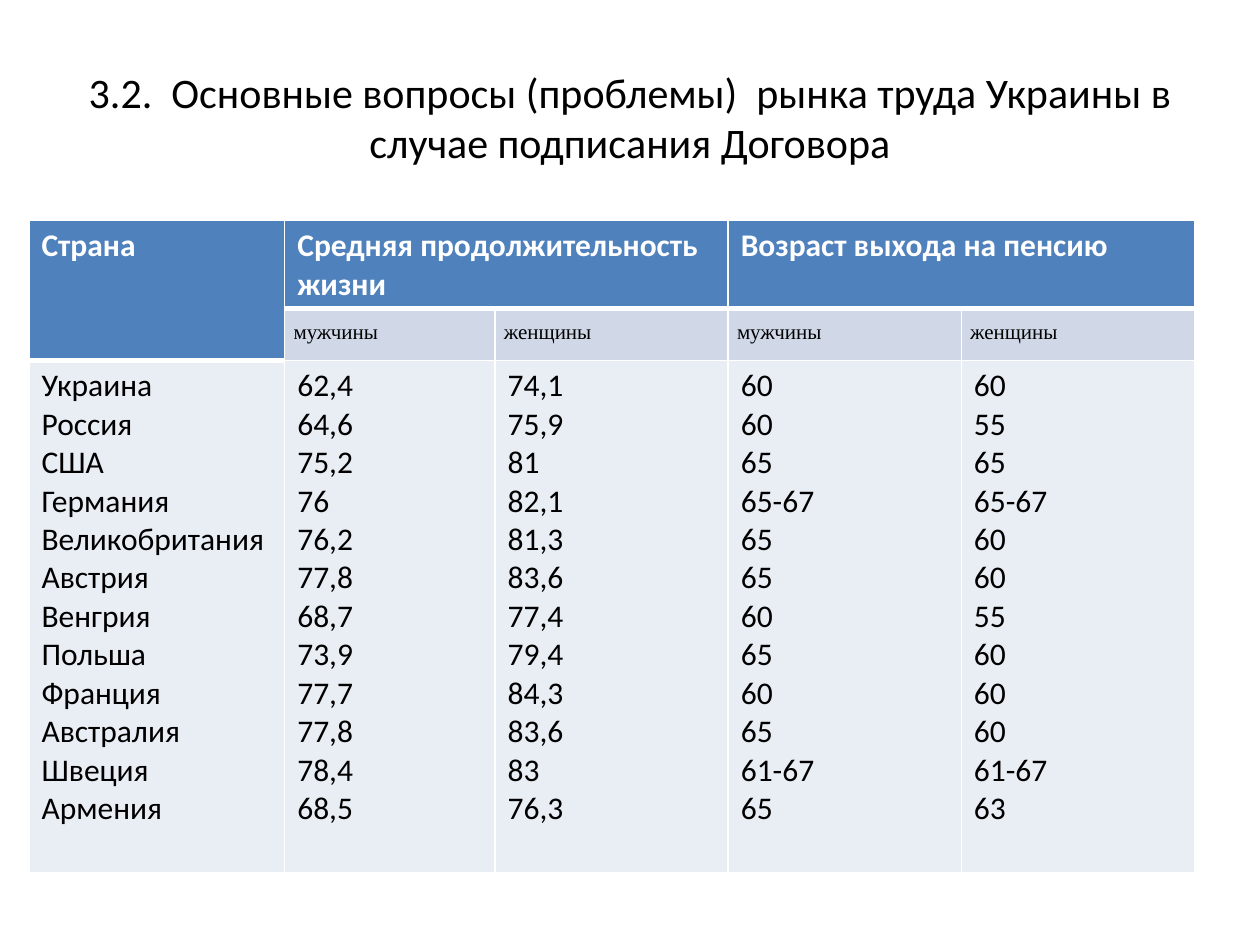
import pptx
import pptx.dml.color
import pptx.enum.text
import pptx.oxml.ns
import pptx.util
from lxml import etree
from pptx.util import Inches

COLORS = {
    "text": "000000",
    "white": "FFFFFF",
    "header": "4F81BD",
    "subheader": "D0D8E8",
    "body": "E9EDF4",
}
TITLE = "3.2.  Основные вопросы (проблемы)  рынка труда Украины в случае подписания Договора"
HEADERS = {0: "Страна", 1: "Средняя продолжительность жизни", 3: "Возраст выхода на пенсию"}
SUBHEADERS = ["", "мужчины", "женщины", "мужчины", "женщины"]
COUNTRIES = [
    ("Украина", "62,4", "74,1", "60", "60"),
    ("Россия", "64,6", "75,9", "60", "55"),
    ("США", "75,2", "81", "65", "65"),
    ("Германия", "76", "82,1", "65-67", "65-67"),
    ("Великобритания", "76,2", "81,3", "65", "60"),
    ("Австрия", "77,8", "83,6", "65", "60"),
    ("Венгрия", "68,7", "77,4", "60", "55"),
    ("Польша", "73,9", "79,4", "65", "60"),
    ("Франция", "77,7", "84,3", "60", "60"),
    ("Австралия", "77,8", "83,6", "65", "60"),
    ("Швеция", "78,4", "83", "61-67", "61-67"),
    ("Армения", "68,5", "76,3", "65", "63"),
]
COLUMN_WIDTHS = [2.03, 1.67, 1.85, 1.85, 1.85]
ROW_HEIGHTS = [0.7, 0.41, 4.07]


def rgb(name):
    return pptx.dml.color.RGBColor.from_string(COLORS[name])


def format_text(text_frame, size, color="text", font="Calibri", bold=False):
    for paragraph in text_frame.paragraphs:
        for run in paragraph.runs:
            run.font.size = pptx.util.Pt(size)
            run.font.name = font
            run.font.bold = bold
            run.font.color.rgb = rgb(color)


def set_borders(cell, bottom=1):
    """Draw white cell borders; widths are in points."""
    properties = cell._tc.get_or_add_tcPr()
    qn = pptx.oxml.ns.qn
    sides = [("a:lnL", 1), ("a:lnR", 1), ("a:lnT", 1), ("a:lnB", bottom)]
    for index, (tag, width) in enumerate(sides):
        line = etree.Element(qn(tag), w=str(pptx.util.Pt(width)))
        fill = etree.SubElement(line, qn("a:solidFill"))
        etree.SubElement(fill, qn("a:srgbClr"), val=COLORS["white"])
        properties.insert(index, line)


def fill_cell(cell, color, bottom=1):
    cell.fill.solid()
    cell.fill.fore_color.rgb = rgb(color)
    set_borders(cell, bottom)


def add_title(slide):
    text_box = slide.shapes.add_textbox(Inches(0.5), Inches(0.3), Inches(9), Inches(1.25))
    text_frame = text_box.text_frame
    text_frame.word_wrap = True
    text_frame.vertical_anchor = pptx.enum.text.MSO_ANCHOR.MIDDLE
    text_frame.text = TITLE
    text_frame.paragraphs[0].alignment = pptx.enum.text.PP_ALIGN.CENTER
    format_text(text_frame, 24)


def fill_headers(table):
    for column in range(len(COLUMN_WIDTHS)):
        cell = table.cell(0, column)
        fill_cell(cell, "header", bottom=3)
        cell.text_frame.text = HEADERS.get(column, "")
        format_text(cell.text_frame, 18, "white", bold=True)
    table.cell(0, 0).merge(table.cell(1, 0))
    for column in (1, 3):
        table.cell(0, column).merge(table.cell(0, column + 1))


def fill_subheaders(table):
    fill_cell(table.cell(1, 0), "header", bottom=3)
    for column, label in enumerate(SUBHEADERS[1:], 1):
        cell = table.cell(1, column)
        fill_cell(cell, "subheader")
        cell.margin_left = cell.margin_right = Inches(0.07)
        cell.margin_top = cell.margin_bottom = 0
        cell.text_frame.text = label
        paragraph = cell.text_frame.paragraphs[0]
        paragraph.alignment = pptx.enum.text.PP_ALIGN.JUSTIFY
        paragraph.line_spacing = 1.5
        format_text(cell.text_frame, 12, font="Times New Roman")


def fill_body(table):
    for column, values in enumerate(zip(*COUNTRIES)):
        cell = table.cell(2, column)
        fill_cell(cell, "body")
        cell.text_frame.text = "\n".join(values)
        format_text(cell.text_frame, 18)


def add_country_table(slide):
    frame = slide.shapes.add_table(
        len(ROW_HEIGHTS), len(COLUMN_WIDTHS), Inches(0.23), Inches(1.75),
        Inches(sum(COLUMN_WIDTHS)), Inches(sum(ROW_HEIGHTS)))
    table = frame.table
    for column, width in zip(table.columns, COLUMN_WIDTHS):
        column.width = Inches(width)
    for row, height in zip(table.rows, ROW_HEIGHTS):
        row.height = Inches(height)
    fill_headers(table)
    fill_subheaders(table)
    fill_body(table)


def main():
    presentation = pptx.Presentation()
    presentation.slide_width = Inches(10)
    presentation.slide_height = Inches(7.5)
    slide = presentation.slides.add_slide(presentation.slide_layouts[6])
    add_title(slide)
    add_country_table(slide)
    presentation.save("out.pptx")


if __name__ == "__main__":
    main()
